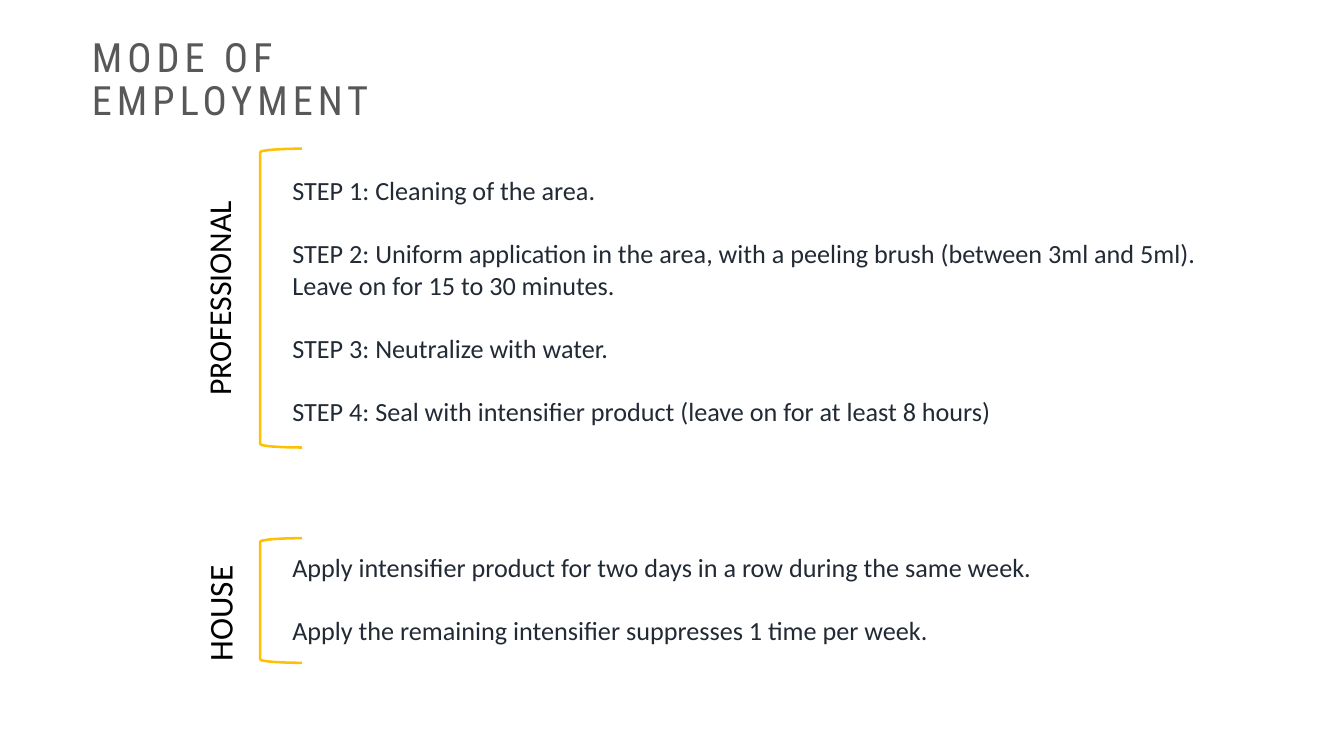
import pptx
import pptx.dml.color
import pptx.enum.shapes
import pptx.enum.text
import pptx.util

COLORS = {"title": "585858", "label": "000000", "body": "222A35", "bracket": "FFC000"}
WIDTH, HEIGHT = 11.11, 6.25

SECTIONS = [
    {
        "box": (14.36, 19.68, 79.34, 39.52),
        "label": "PROFESSIONAL",
        "label_size": 18.9,
        "label_shift": 0,
        "text_shift": 2.56,
        "steps": [
            "STEP 1: Cleaning of the area.",
            "STEP 2: Uniform application in the area, with a peeling brush "
            "(between 3ml and 5ml). Leave on for 15 to 30 minutes.",
            "STEP 3: Neutralize with water.",
            "STEP 4: Seal with intensifier product (leave on for at least 8 hours)",
        ],
    },
    {
        "box": (14.36, 71.2, 79.34, 16.48),
        "label": "HOUSE",
        "label_size": 19.8,
        "label_shift": 1.68,
        "text_shift": 0.96,
        "steps": [
            "Apply intensifier product for two days in a row during the same week.",
            "Apply the remaining intensifier suppresses 1 time per week.",
        ],
    },
]


def across(share):
    return pptx.util.Inches(WIDTH * share / 100)


def down(share):
    return pptx.util.Inches(HEIGHT * share / 100)


def color(name):
    return pptx.dml.color.RGBColor.from_string(COLORS[name])


def style(p, font, size, name):
    p.font.name = font
    p.font.size = pptx.util.Pt(size)
    p.font.color.rgb = color(name)


def add_text(s, box, lines, font, size, name, gap=0):
    x, y, w, h = box
    sp = s.shapes.add_textbox(across(x), down(y), across(w), down(h))
    tf = sp.text_frame
    tf.word_wrap = True
    for i, line in enumerate(lines):
        p = tf.paragraphs[0] if i == 0 else tf.add_paragraph()
        p.text = line
        style(p, font, size, name)
        if i:
            p.space_before = pptx.util.Pt(gap)
    return sp


def add_title(s, box):
    sp = add_text(s, box, ["MODE OF EMPLOYMENT"], "Roboto Condensed", 24, "title")
    tf = sp.text_frame
    tf.margin_left = tf.margin_right = tf.margin_top = tf.margin_bottom = 0
    tf.vertical_anchor = pptx.enum.text.MSO_ANCHOR.MIDDLE
    p = tf.paragraphs[0]
    p.line_spacing = 0.9
    p.runs[0].font._element.set("spc", "300")


def add_section(s, box, label, label_size, label_shift, text_shift, steps):
    x, y, w, h = box
    bracket = s.shapes.add_shape(
        pptx.enum.shapes.MSO_SHAPE.LEFT_BRACKET,
        across(x + 5), down(y), across(3.1), down(h))
    bracket.shadow.inherit = False
    bracket.fill.background()
    bracket.line.color.rgb = color("bracket")
    bracket.line.width = pptx.util.Pt(1.5)

    text_box = (x + 6.5, y + text_shift, w - 6.5, h - text_shift)
    add_text(s, text_box, steps, "Calibri", 15.6, "body", gap=19)

    label_w, label_h = 24.4, 7
    label_box = (x + 2 - label_w / 2, y + h / 2 + label_shift - label_h / 2, label_w, label_h)
    sp = add_text(s, label_box, [label], "Calibri", label_size, "label")
    sp.rotation = 270
    sp.text_frame.paragraphs[0].alignment = pptx.enum.text.PP_ALIGN.CENTER


def main():
    prs = pptx.Presentation()
    prs.slide_width = pptx.util.Inches(WIDTH)
    prs.slide_height = pptx.util.Inches(HEIGHT)
    s = prs.slides.add_slide(prs.slide_layouts[6])
    add_title(s, (6.84, 7.84, 20.7, 5.76))
    for section in SECTIONS:
        add_section(s, **section)
    prs.save("out.pptx")


if __name__ == "__main__":
    main()
